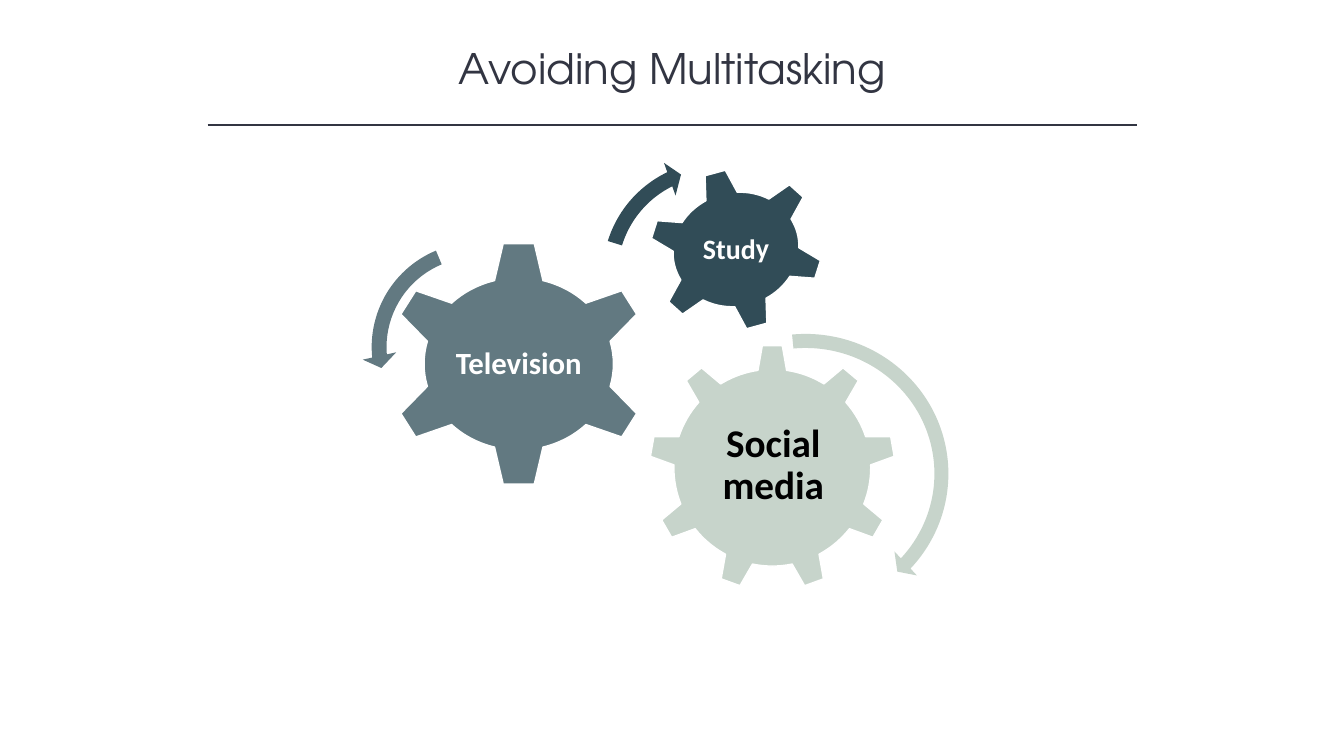
from lxml import etree
from pptx import Presentation
from pptx.dml.color import RGBColor
from pptx.enum.shapes import MSO_CONNECTOR, MSO_SHAPE
from pptx.enum.text import MSO_ANCHOR, MSO_AUTO_SIZE, PP_ALIGN
from pptx.oxml.ns import qn
from pptx.util import Pt

PX = 9144
STRAIGHT = MSO_CONNECTOR.STRAIGHT
GEAR_6, GEAR_9 = MSO_SHAPE.GEAR_6, MSO_SHAPE.GEAR_9
ARROW, LEFT_ARROW = MSO_SHAPE.CIRCULAR_ARROW, MSO_SHAPE.LEFT_CIRCULAR_ARROW
TOP, MIDDLE = MSO_ANCHOR.TOP, MSO_ANCHOR.MIDDLE
CENTER = PP_ALIGN.CENTER
NO_AUTOFIT = MSO_AUTO_SIZE.NONE

COLORS = {
    "ink": "323542",
    "sage": "C7D4CB",
    "slate": "627981",
    "navy": "314C57",
    "white": "FFFFFF",
    "black": "000000",
}
HEADING_FONT, BODY_FONT = "TeX Gyre Adventor", "Calibri"

GEARS = [
    (GEAR_9, (644, 342, 244, 244), 0, "sage",
     "Social media", (694, 399, 146, 126), 0, 28, "black", 4),
    (GEAR_6, (384, 239, 261, 244), 0, "slate",
     "Television", (448, 301, 133, 121), 0, 22, "white", 3),
    (GEAR_6, (643, 167, 174, 161), 344.8, "navy",
     "Study", (682, 202, 96, 92), 359.8, 20, "white", 3),
]
ARROWS = [
    (ARROW, (648, 322, 302, 296), 0, "sage", (0.047, 2.99, 25.131, 158.679, 0.055)),
    (LEFT_ARROW, (359, 231, 227, 227), 0, "slate", (0.065, 4.3, 104.891, 148.378, 0.075)),
    (ARROW, (588, 150, 245, 245), 22.1, "navy", (0.06, 3.941, 133.138, 105.082, 0.07)),
]


class SlideBuilder:
    def __init__(self, prs):
        self.s = prs.slides.add_slide(prs.slide_layouts[5])

    def emu(self, box):
        return [v * PX for v in box]

    def color(self, name):
        return RGBColor.from_string(COLORS[name])

    def add_text(self, tf, text, size, font, color, bold=False):
        tf.word_wrap = True
        p = tf.paragraphs[0]
        p.alignment = CENTER
        r = p.add_run()
        r.text = text
        r.font.size = Pt(size)
        r.font.name = font
        r.font.bold = bold
        r.font.color.rgb = self.color(color)
        return p

    def title(self, text, box):
        sp = self.s.shapes.title
        sp.left, sp.top, sp.width, sp.height = self.emu(box)
        tf = sp.text_frame
        tf.auto_size = NO_AUTOFIT
        tf.vertical_anchor = TOP
        self.add_text(tf, text, 30, HEADING_FONT, "ink")

    def rule(self, x1, x2, y):
        cx = self.s.shapes.add_connector(STRAIGHT, *self.emu((x1, y, x2, y)))
        cx.line.color.rgb = self.color("ink")
        cx.line.width = Pt(1)
        etree.SubElement(cx._element.spPr, qn("a:effectLst"))

    def shape(self, kind, box, rotation, fill, outline=None):
        sp = self.s.shapes.add_shape(kind, *self.emu(box))
        sp.shadow.inherit = False
        sp.rotation = rotation
        sp.fill.solid()
        sp.fill.fore_color.rgb = self.color(fill)
        if outline:
            sp.line.color.rgb = self.color(outline)
            sp.line.width = Pt(1)
        else:
            sp.line.fill.background()
        return sp

    def label(self, text, box, rotation, size, color, inset):
        sp = self.s.shapes.add_textbox(*self.emu(box))
        sp.rotation = rotation
        tf = sp.text_frame
        tf.margin_left = tf.margin_right = inset * PX
        tf.margin_top = tf.margin_bottom = inset * PX
        tf.vertical_anchor = MIDDLE
        p = self.add_text(tf, text, size, BODY_FONT, color, bold=True)
        p.line_spacing = 0.9

    def gear(self, kind, box, rotation, fill, text, text_box, text_rotation,
             size, color, inset):
        self.shape(kind, box, rotation, fill, "white")
        self.label(text, text_box, text_rotation, size, color, inset)

    def arrow(self, kind, box, rotation, fill, adjustments):
        sp = self.shape(kind, box, rotation, fill)
        for i, value in enumerate(adjustments):
            sp.adjustments[i] = value


def main():
    prs = Presentation()
    prs.slide_width, prs.slide_height = 1333 * PX, 750 * PX
    slide = SlideBuilder(prs)
    slide.title("Avoiding Multitasking", (167, 37, 1000, 61))
    slide.rule(206, 1128, 124)
    for gear in GEARS:
        slide.gear(*gear)
    for arrow in ARROWS:
        slide.arrow(*arrow)
    prs.save("out.pptx")


if __name__ == "__main__":
    main()
